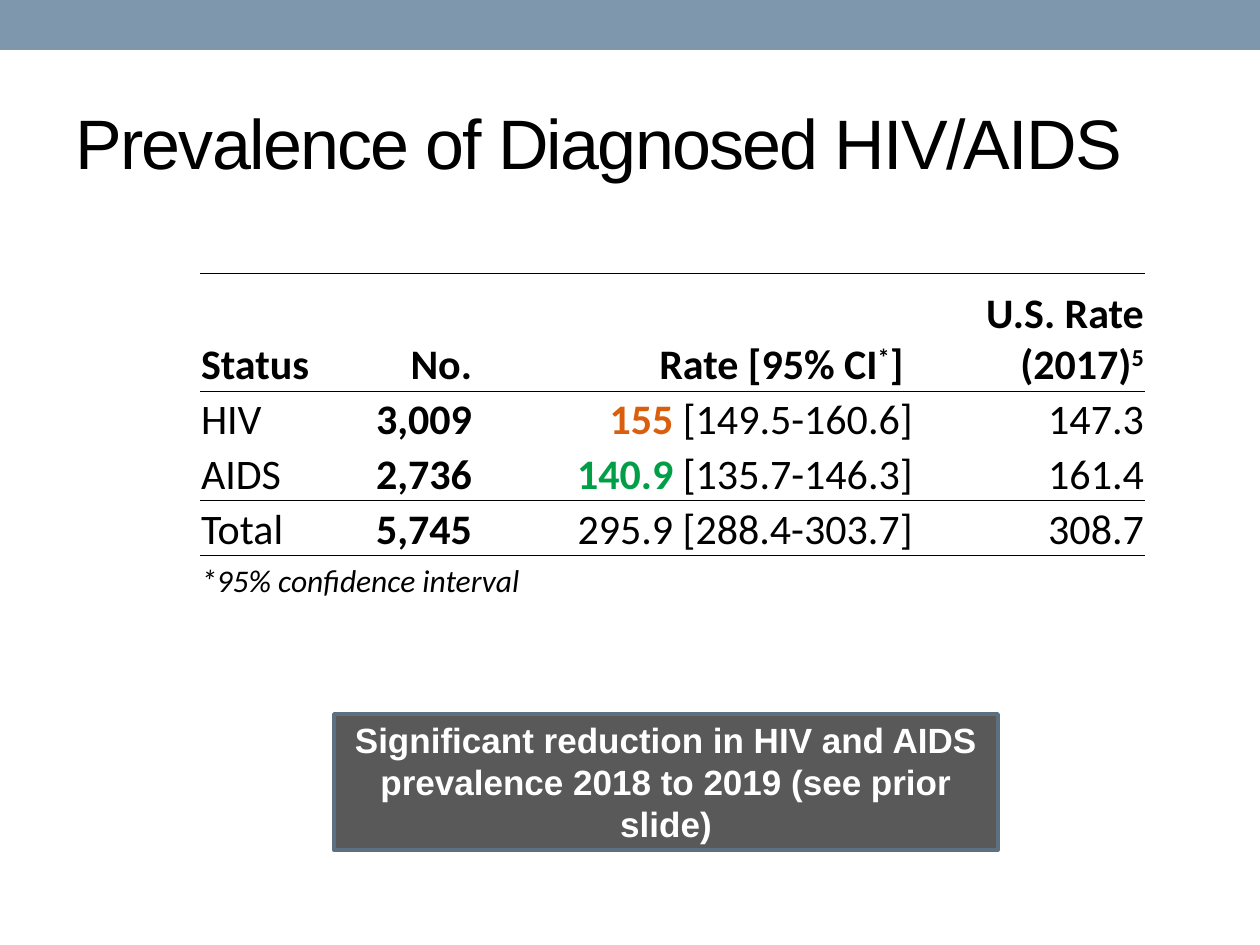
from lxml.etree import SubElement
from pptx import Presentation
from pptx.dml.color import RGBColor
from pptx.enum.shapes import MSO_SHAPE
from pptx.enum.text import MSO_ANCHOR, PP_ALIGN
from pptx.oxml.ns import qn
from pptx.util import Emu, Pt

COLORS = {
    "band": "7E97AD", "black": "000000", "white": "FFFFFF",
    "callout": "595959", "callout_line": "5D7080",
    "orange": "D95F0E", "green": "009E47",
}
SCALE = 914400 / 126


def px(length):
    return Emu(round(length * SCALE))


def color(name):
    return RGBColor.from_string(COLORS[name])


class SlideBuilder:
    def __init__(self, slide, heading_font, table_font):
        self.slide = slide
        self.heading_font = heading_font
        self.table_font = table_font

    def run(self, para, text, font, size, ink="black", bold=False,
            italic=False, spacing=None, raised=False):
        span = para.add_run()
        span.text = text
        span.font.name = font
        span.font.size = Pt(size)
        span.font.bold = bold
        span.font.italic = italic
        span.font.color.rgb = color(ink)
        properties = span.font._element
        if spacing:
            properties.set("spc", str(spacing * 100))
        if raised:
            properties.set("baseline", "30000")

    def title(self, place, text):
        box = self.slide.shapes.add_textbox(*map(px, place))
        frame = box.text_frame
        frame.word_wrap = True
        frame.vertical_anchor = MSO_ANCHOR.MIDDLE
        self.run(frame.paragraphs[0], text, self.heading_font, 40, spacing=-1)

    def rectangle(self, place, fill, line=None, text=None):
        box = self.slide.shapes.add_shape(MSO_SHAPE.RECTANGLE, *map(px, place))
        box.shadow.inherit = False
        box.fill.solid()
        box.fill.fore_color.rgb = color(fill)
        if line:
            box.line.color.rgb = color(line)
            box.line.width = Pt(2.08)
        else:
            box.line.fill.background()
        if text:
            frame = box.text_frame
            frame.word_wrap = True
            frame.vertical_anchor = MSO_ANCHOR.MIDDLE
            para = frame.paragraphs[0]
            para.alignment = PP_ALIGN.CENTER
            self.run(para, text, self.heading_font, 20, "white", bold=True)

    def borders(self, cell, ruled_sides):
        properties = cell._tc.get_or_add_tcPr()
        for side in ("lnL", "lnR", "lnT", "lnB"):
            line = SubElement(properties, qn(f"a:{side}"), w=str(Pt(0.5)))
            if side in ruled_sides:
                fill = SubElement(line, qn("a:solidFill"))
                SubElement(fill, qn("a:srgbClr"), val=COLORS["black"])
            else:
                SubElement(line, qn("a:noFill"))

    def table(self, left, top, widths, heights, rows, ruled_tops):
        place = (left, top, sum(widths), sum(heights))
        table = self.slide.shapes.add_table(
            len(rows), len(widths), *map(px, place)).table
        table.first_row = table.horz_banding = False
        for column, width in zip(table.columns, widths):
            column.width = px(width)
        for row, height in zip(table.rows, heights):
            row.height = px(height)
        for r, cells in enumerate(rows):
            ruled = [side for side, edge in (("lnT", r), ("lnB", r + 1))
                     if edge in ruled_tops]
            for c in range(len(widths)):
                cell = table.cell(r, c)
                cell.margin_left = cell.margin_right = cell.margin_top = px(1)
                cell.margin_bottom = 0
                cell.vertical_anchor = MSO_ANCHOR.BOTTOM
                self.borders(cell, ruled)
                cell.fill.background()
                if c < len(cells):
                    para = cell.text_frame.paragraphs[0]
                    para.alignment = PP_ALIGN.RIGHT if c else PP_ALIGN.LEFT
                    for text, style in cells[c]:
                        self.run(para, text, self.table_font,
                                 **{"size": 24, **style})
            # A row with a single entry runs across the whole table
            if len(cells) == 1:
                table.cell(r, 0).merge(table.cell(r, len(widths) - 1))


BOLD = {"bold": True}
RAISED = {"bold": True, "raised": True}


def status_row(status, number, rate, us_rate):
    return [[(status, {})], [(number, BOLD)], rate, [(us_rate, {})]]


def main():
    deck = Presentation()
    deck.slide_width, deck.slide_height = px(1260), px(945)
    page = SlideBuilder(deck.slides.add_slide(deck.slide_layouts[6]),
                        "Arial", "Calibri")

    # Top band and title
    page.rectangle((0, 0, 1260, 50), "band")
    page.title((63, 73, 1134, 136), "Prevalence of Diagnosed HIV/AIDS")

    # Callout
    page.rectangle((334, 714, 664, 136), "callout", "callout_line",
                   "Significant reduction in HIV and AIDS prevalence "
                   "2018 to 2019 (see prior slide)")

    # Prevalence table
    rows = [
        [[("Status", BOLD)], [("No.", BOLD)],
         [("Rate [95% CI", BOLD), ("*", RAISED), ("] ", BOLD)],
         [("U.S. Rate (2017)", BOLD), ("5", RAISED)]],
        status_row("HIV", "3,009", [("155 ", {"bold": True, "ink": "orange"}),
                                    ("[149.5-160.6]", {})], "147.3"),
        status_row("AIDS", "2,736", [("140.9 ", {"bold": True, "ink": "green"}),
                                     ("[135.7-146.3]", {})], "161.4"),
        status_row("Total", "5,745", [("295.9 [288.4-303.7]", {})], "308.7"),
        [[("*95% confidence interval", {"size": 18, "italic": True})]],
    ]
    page.table(200, 273, (116, 157, 441, 231), (118, 55, 55, 55, 45),
               rows, ruled_tops=(0, 1, 3, 4))

    deck.save("out.pptx")


if __name__ == "__main__":
    main()
